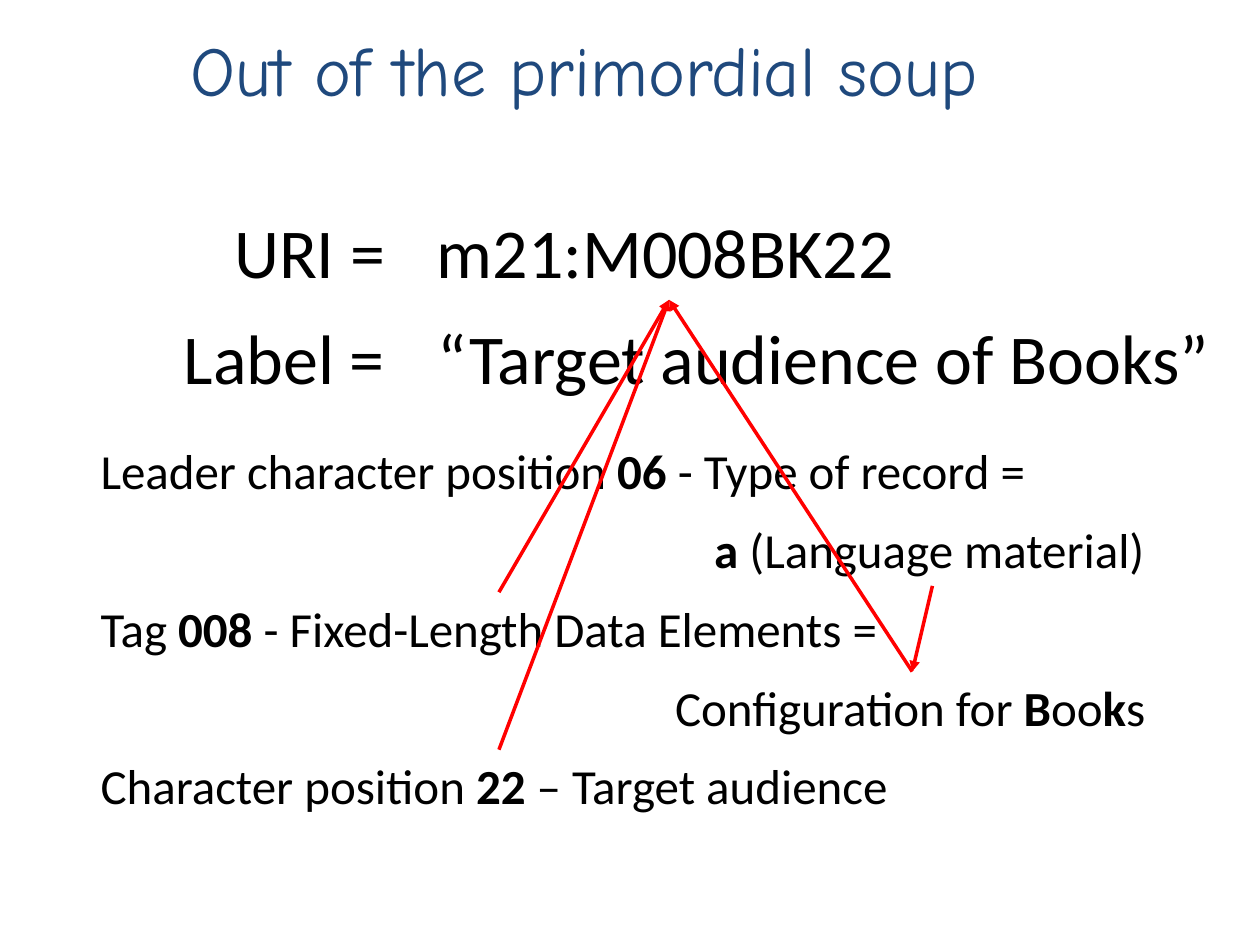
import pptx
import pptx.util
import pptx.dml.color
import pptx.enum.shapes
import pptx.enum.text
import pptx.oxml
import pptx.oxml.ns

Inches = pptx.util.Inches
Pt = pptx.util.Pt
NAVY = pptx.dml.color.RGBColor(0x1F, 0x49, 0x7D)
BLACK = pptx.dml.color.RGBColor(0, 0, 0)
RED = pptx.dml.color.RGBColor(0xFF, 0, 0)

deck = pptx.Presentation()
deck.slide_width, deck.slide_height = Inches(10), Inches(7.5)
slide = deck.slides.add_slide(deck.slide_layouts[5])


def write_line(holder, runs, size, font="Calibri", color=BLACK):
    """Fill a one-line text holder with (text, bold) runs."""
    frame = holder.text_frame
    frame.word_wrap = False
    frame.auto_size = pptx.enum.text.MSO_AUTO_SIZE.SHAPE_TO_FIT_TEXT
    paragraph = frame.paragraphs[0]
    paragraph.alignment = pptx.enum.text.PP_ALIGN.LEFT
    for text, bold in runs:
        run = paragraph.add_run()
        run.text = text
        run.font.name = font
        run.font.size = Pt(size)
        run.font.bold = bold
        run.font.color.rgb = color


# Title
title = slide.shapes.title
title.left, title.top = Inches(1.41), Inches(0.16)
title.width, title.height = Inches(7.17), Inches(0.77)
title.text_frame.vertical_anchor = pptx.enum.text.MSO_ANCHOR.TOP
write_line(title, [("Out of the primordial soup", False)], 40, "Comic Neue", NAVY)

# URI and label: names end at one edge, values start at another
name_right, value_left = 3.17, 3.37
properties = [
    (1.61, "URI =", 1.41, "m21:M008BK22", 3.87),
    (2.45, "Label =", 1.81, "“Target audience of Books”", 6.38),
]
for top, name, name_width, value, value_width in properties:
    for left, width, text in [(name_right - name_width, name_width, name),
                              (value_left, value_width, value)]:
        box = slide.shapes.add_textbox(Inches(left), Inches(top), Inches(width), Inches(0.77))
        write_line(box, [(text, False)], 40)

# MARC elements, evenly spaced rows
first_row, row_pitch = 3.45, 0.625
elements = [
    (0.7, 7.63, [("Leader character position ", False), ("06", True),
                 (" - Type of record =", False)]),
    (5.57, 3.65, [("a", True), (" (Language material)", False)]),
    (0.7, 6.52, [("Tag ", False), ("008", True),
                 (" - Fixed-Length Data Elements =", False)]),
    (5.26, 3.96, [("Configuration for ", False), ("B", True), ("oo", False),
                  ("k", True), ("s", False)]),
    (0.7, 6.52, [("Character position ", False), ("22 ", True),
                 ("– Target audience", False)]),
]
for row, (left, width, runs) in enumerate(elements):
    box = slide.shapes.add_textbox(Inches(left), Inches(first_row + row * row_pitch),
                                   Inches(width), Inches(0.57))
    write_line(box, runs, 28)

# Arrows from the elements to the URI
uri_point, books_point = (5.31, 2.38), (7.24, 5.33)
arrows = [
    ((7.4, 4.65), books_point),
    ((3.96, 5.95), uri_point),
    (books_point, uri_point),
    ((3.96, 4.7), uri_point),
]
for start, end in arrows:
    arrow = slide.shapes.add_connector(pptx.enum.shapes.MSO_CONNECTOR.STRAIGHT,
                                       *map(Inches, start + end))
    arrow.line.color.rgb = RED
    arrow.line.width = Pt(2)
    head = pptx.oxml.parse_xml(
        f'<a:tailEnd {pptx.oxml.ns.nsdecls("a")} type="triangle"/>')
    arrow.line._get_or_add_ln().append(head)
    no_shadow = pptx.oxml.parse_xml(f'<a:effectLst {pptx.oxml.ns.nsdecls("a")}/>')
    arrow._element.spPr.append(no_shadow)

deck.save("out.pptx")
